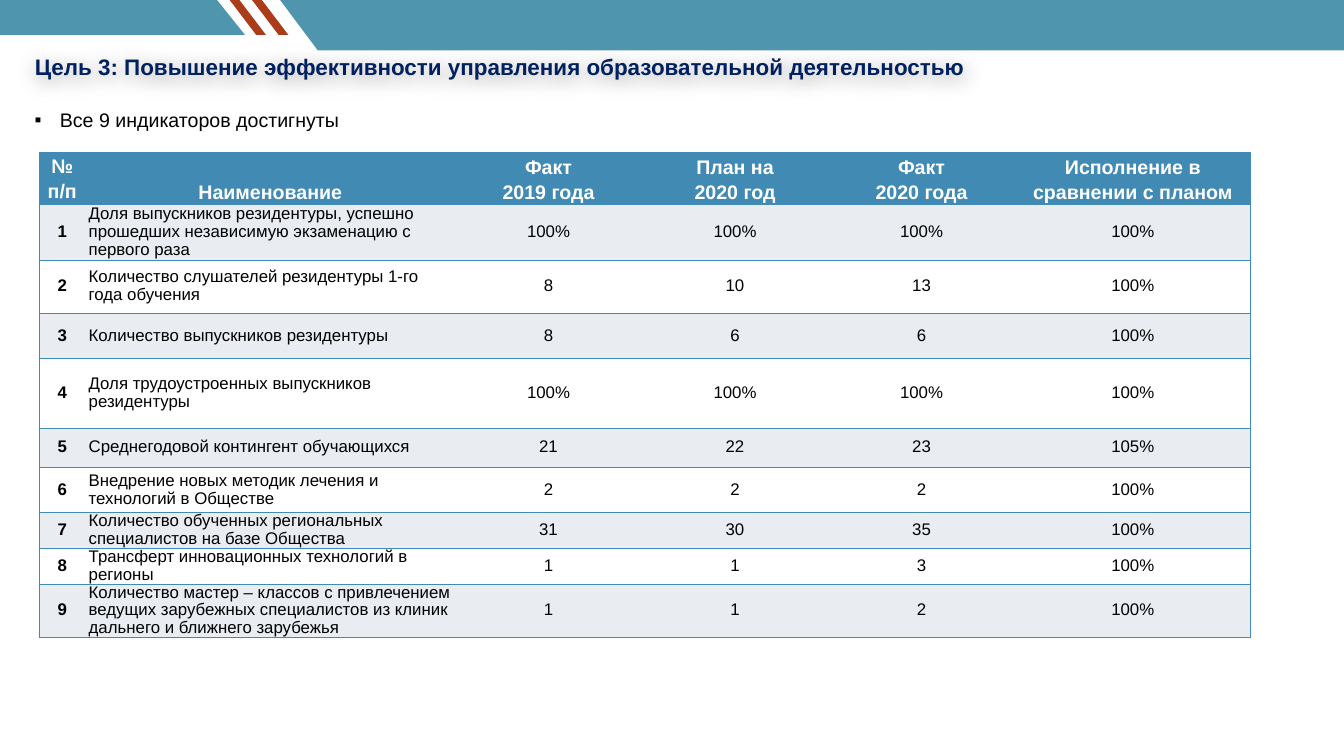
from lxml import etree
from pptx import Presentation
from pptx.dml.color import RGBColor
from pptx.enum import text
from pptx.oxml import parse_xml
from pptx.oxml.ns import nsdecls, qn
from pptx.util import Pt

TEAL = RGBColor(0x50, 0x95, 0xAE)
RUST = RGBColor(0xAB, 0x3C, 0x19)
NAVY = RGBColor(0x00, 0x20, 0x60)
BLUE = RGBColor(0x41, 0x8A, 0xB3)
PALE = RGBColor(0xE9, 0xED, 0xF2)
WHITE = RGBColor(0xFF, 0xFF, 0xFF)
BLACK = RGBColor(0x00, 0x00, 0x00)
FONT = "Arial"
SLIDE_W, SLIDE_H = 1919.52, 1080
NO_STYLE = "{2D5ABB26-0587-4C30-8999-92F81FD0307C}"

COL_WIDTHS = [65.5, 528.5, 266.4, 266.4, 266.4, 337]
ROW_HEIGHTS = [74.2, 80, 75.6, 64.8, 99.4, 56.2, 64.8, 50.4, 50.4, 50.4]
HEADERS = [
    ["№ п/п"], ["Наименование"], ["Факт", "2019 года"], ["План на", "2020 год"],
    ["Факт", "2020 года"], ["Исполнение в сравнении с планом"],
]
INDICATORS = [
    ("Доля выпускников резидентуры, успешно прошедших независимую экзаменацию с первого раза",
     "100%", "100%", "100%", "100%"),
    ("Количество слушателей резидентуры 1-го года обучения", "8", "10", "13", "100%"),
    ("Количество выпускников резидентуры", "8", "6", "6", "100%"),
    ("Доля трудоустроенных выпускников резидентуры", "100%", "100%", "100%", "100%"),
    ("Среднегодовой контингент обучающихся", "21", "22", "23", "105%"),
    ("Внедрение новых методик лечения и технологий в Обществе", "2", "2", "2", "100%"),
    ("Количество обученных региональных специалистов на базе Общества",
     "31", "30", "35", "100%"),
    ("Трансферт инновационных технологий в регионы", "1", "1", "3", "100%"),
    ("Количество мастер – классов с привлечением ведущих зарубежных специалистов "
     "из клиник дальнего и ближнего зарубежья", "1", "1", "2", "100%"),
]


def add_run(p, words, size, color, bold=False):
    r = p.add_run()
    r.text = words
    r.font.name, r.font.size, r.font.bold = FONT, Pt(size), bold
    r.font.color.rgb = color


def place(sp, box):
    sp.left, sp.top, sp.width, sp.height = (Pt(v) for v in box)


def add_title(slide, box):
    sp = slide.shapes.title
    place(sp, box)
    # Soft halo behind the words
    sp._element.spPr.append(parse_xml(
        f'<a:effectLst {nsdecls("a")}><a:outerShdw blurRad="365760" dist="38100" dir="5400000">'
        '<a:srgbClr val="000000"><a:alpha val="40000"/></a:srgbClr></a:outerShdw></a:effectLst>'))
    tf = sp.text_frame
    tf.word_wrap = True
    tf.auto_size = text.MSO_AUTO_SIZE.NONE
    tf.vertical_anchor = text.MSO_ANCHOR.MIDDLE
    p = tf.paragraphs[0]
    p.alignment = text.PP_ALIGN.JUSTIFY
    add_run(p, "Цель 3: Повышение эффективности управления образовательной деятельностью",
            32, NAVY, True)


def add_summary(slide, box):
    tf = slide.shapes.add_textbox(*(Pt(v) for v in box)).text_frame
    tf.word_wrap = False
    tf.auto_size = text.MSO_AUTO_SIZE.SHAPE_TO_FIT_TEXT
    p = tf.paragraphs[0]
    pPr = p._p.get_or_add_pPr()
    pPr.set("marL", str(Pt(36)))
    pPr.set("indent", str(-Pt(36)))
    etree.SubElement(pPr, qn("a:buFont"), typeface=FONT)
    etree.SubElement(pPr, qn("a:buChar"), char="▪")
    add_run(p, "Все 9 индикаторов достигнуты", 28, BLACK)


def add_border(cell, side):
    tcPr = cell._tc.get_or_add_tcPr()
    tcPr.append(parse_xml(
        f'<a:{side} {nsdecls("a")} w="{Pt(1)}"><a:solidFill><a:srgbClr val="{BLUE}"/>'
        f'</a:solidFill></a:{side}>'))


def fill_cell(cell, lines, fill, color, size, bold, align, anchor, spacing, sides):
    cell.margin_left = cell.margin_right = Pt(5)
    cell.margin_top = cell.margin_bottom = 0
    cell.vertical_anchor = anchor
    tf = cell.text_frame
    for i, line in enumerate(lines):
        p = tf.add_paragraph() if i else tf.paragraphs[0]
        p.alignment, p.line_spacing = align, spacing
        add_run(p, line, size, color, bold)
    # Borders come before the fill in the cell properties
    for side in sides:
        add_border(cell, side)
    cell.fill.solid()
    cell.fill.fore_color.rgb = fill


def add_indicators(slide, left, top):
    frame = slide.shapes.add_table(
        len(ROW_HEIGHTS), len(COL_WIDTHS), Pt(left), Pt(top),
        Pt(sum(COL_WIDTHS)), Pt(sum(ROW_HEIGHTS)))
    table = frame.table
    table._tbl.tblPr.find(qn("a:tableStyleId")).text = NO_STYLE
    table.horz_banding = False
    for col, width in zip(table.columns, COL_WIDTHS):
        col.width = Pt(width)
    for row, height in zip(table.rows, ROW_HEIGHTS):
        row.height = Pt(height)

    last = len(COL_WIDTHS) - 1
    sides = [["lnL"] * (c == 0) + ["lnR"] * (c == last) + ["lnT", "lnB"]
             for c in range(last + 1)]
    center, middle = text.PP_ALIGN.CENTER, text.MSO_ANCHOR.MIDDLE

    # Header row
    for c, lines in enumerate(HEADERS):
        anchor = {0: text.MSO_ANCHOR.TOP, 1: text.MSO_ANCHOR.BOTTOM}.get(c, middle)
        fill_cell(table.cell(0, c), lines, BLUE, WHITE, 28, True, center, anchor, 1.15, sides[c])

    # Numbered indicator rows
    for n, values in enumerate(INDICATORS, 1):
        for c, value in enumerate((str(n), *values)):
            align = text.PP_ALIGN.LEFT if c == 1 else center
            fill_cell(table.cell(n, c), [value], PALE if n % 2 else WHITE, BLACK, 24,
                      c == 0, align, middle, 0.95, sides[c])


def add_polygon(slide, points, color):
    builder = slide.shapes.build_freeform(*points[0], scale=float(Pt(1)))
    builder.add_line_segments(points[1:], close=True)
    sp = builder.convert_to_shape()
    sp.shadow.inherit = False
    sp.fill.solid()
    sp.fill.fore_color.rgb = color
    sp.line.fill.background()


def add_band(slide, width, tall, short):
    # Teal bars on both sides
    add_polygon(slide, [(width, 0), (399.6, 0), (453.6, tall), (width, tall)], TEAL)
    add_polygon(slide, [(310.3, 0), (0, 0), (0, short), (350, short)], TEAL)
    # Slanted stripes
    for x in (360, 328.3):
        add_polygon(slide, [(x + 14, 0), (x, 0), (x + 38.2, short), (x + 52.2, short)], RUST)


def main():
    prs = Presentation()
    prs.slide_width, prs.slide_height = Pt(SLIDE_W), Pt(SLIDE_H)
    slide = prs.slides.add_slide(prs.slide_layouts[5])
    add_title(slide, (42.5, 26.6, SLIDE_W - 42.5, 137.5))
    add_indicators(slide, 56.2, 217.4)
    add_band(slide, SLIDE_W, 72, 50)
    add_summary(slide, (42.5, 151.2, 450.7, 41))
    prs.save("out.pptx")


if __name__ == "__main__":
    main()
